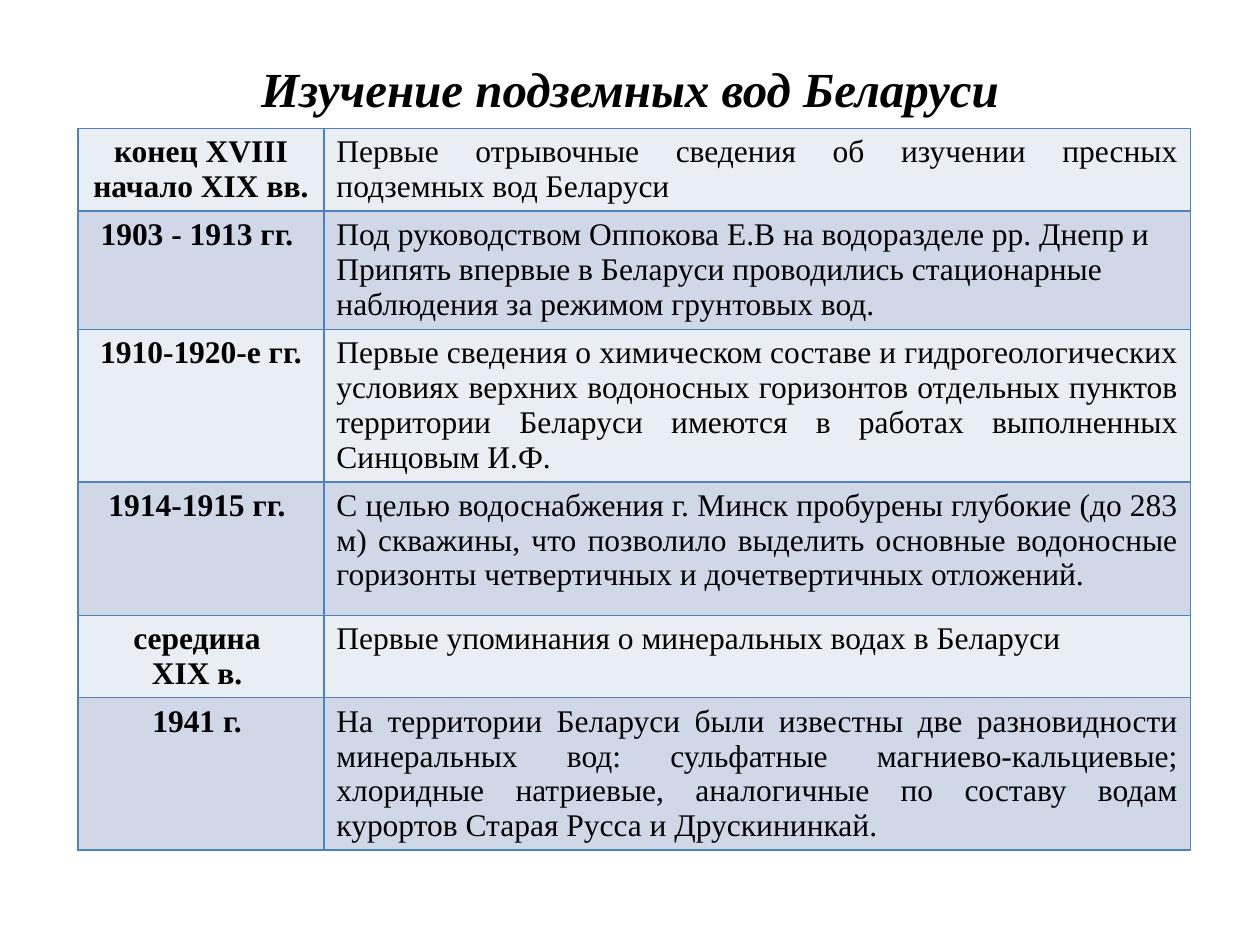
import pptx
import pptx.util
import pptx.dml.color
import pptx.enum.text
import pptx.oxml
import pptx.oxml.ns

Inches = pptx.util.Inches
ALIGN = pptx.enum.text.PP_ALIGN
FONT = "Times New Roman"
BORDER = "4F81BD"
BANDS = ["E9EDF4", "D0D8E8"]
COLUMNS = [1.95, 6.88]
ROWS = [
    (0.65, ["конец XVIII начало XIX вв. "], ALIGN.JUSTIFY,
     "Первые отрывочные сведения об изучении пресных подземных вод Беларуси"),
    (0.94, ["1903 - 1913 гг. "], ALIGN.LEFT,
     "Под руководством Оппокова Е.В на водоразделе рр. Днепр и Припять впервые "
     "в Беларуси проводились стационарные наблюдения за режимом грунтовых вод."),
    (1.21, ["1910-1920-е гг."], ALIGN.JUSTIFY,
     "Первые сведения о химическом составе и гидрогеологических условиях верхних "
     "водоносных горизонтов отдельных пунктов территории Беларуси имеются в работах "
     "выполненных Синцовым И.Ф."),
    (1.06, ["1914-1915 гг. "], ALIGN.JUSTIFY,
     "С целью водоснабжения г. Минск пробурены глубокие (до 283 м) скважины, что "
     "позволило выделить основные водоносные горизонты четвертичных и "
     "дочетвертичных отложений. "),
    (0.65, ["середина ", "XIX в. "], ALIGN.JUSTIFY,
     "Первые упоминания о минеральных водах в Беларуси"),
    (1.21, ["1941 г. "], ALIGN.JUSTIFY,
     "На территории Беларуси были известны две разновидности минеральных вод: "
     "сульфатные магниево-кальциевые; хлоридные натриевые, аналогичные по составу "
     "водам курортов Старая Русса и Друскининкай."),
]


def color(value):
    return pptx.dml.color.RGBColor.from_string(value)


def write(tf, lines, size, align, bold=False, italic=False):
    for i, line in enumerate(lines):
        p = tf.add_paragraph() if i else tf.paragraphs[0]
        p.alignment = align
        r = p.add_run()
        r.text = line
        r.font.name = FONT
        r.font.size = pptx.util.Pt(size)
        r.font.bold = bold
        r.font.italic = italic
        r.font.color.rgb = color("000000")


def set_borders(cell):
    tc_pr = cell._tc.get_or_add_tcPr()
    for i, side in enumerate(["lnL", "lnR", "lnT", "lnB"]):
        tc_pr.insert(i, pptx.oxml.parse_xml(
            f'<a:{side} {pptx.oxml.ns.nsdecls("a")} w="{pptx.util.Pt(1)}">'
            f'<a:solidFill><a:srgbClr val="{BORDER}"/></a:solidFill></a:{side}>'))


def fill_cell(cell, fill, lines, align, bold=False):
    cell.fill.solid()
    cell.fill.fore_color.rgb = color(fill)
    set_borders(cell)
    write(cell.text_frame, lines, 18, align, bold)


def add_title(s, text):
    sp = s.shapes.title
    sp.left, sp.top = Inches(0.5), Inches(0.3)
    sp.width, sp.height = Inches(9), Inches(0.79)
    sp.text_frame.vertical_anchor = pptx.enum.text.MSO_ANCHOR.MIDDLE
    write(sp.text_frame, [text], 28, ALIGN.CENTER, True, True)


def add_history_table(s):
    height = sum(row[0] for row in ROWS)
    table = s.shapes.add_table(len(ROWS), len(COLUMNS), Inches(0.62), Inches(1.02),
                               Inches(sum(COLUMNS)), Inches(height)).table
    for column, width in zip(table.columns, COLUMNS):
        column.width = Inches(width)
    for i, (row_height, period, align, event) in enumerate(ROWS):
        table.rows[i].height = Inches(row_height)
        fill = BANDS[i % 2]
        fill_cell(table.cell(i, 0), fill, period, ALIGN.CENTER, True)
        fill_cell(table.cell(i, 1), fill, [event], align)


def main():
    prs = pptx.Presentation()
    prs.slide_width, prs.slide_height = Inches(10), Inches(7.5)
    s = prs.slides.add_slide(prs.slide_layouts[5])
    add_title(s, "Изучение подземных вод Беларуси")
    add_history_table(s)
    prs.save("out.pptx")


if __name__ == "__main__":
    main()
